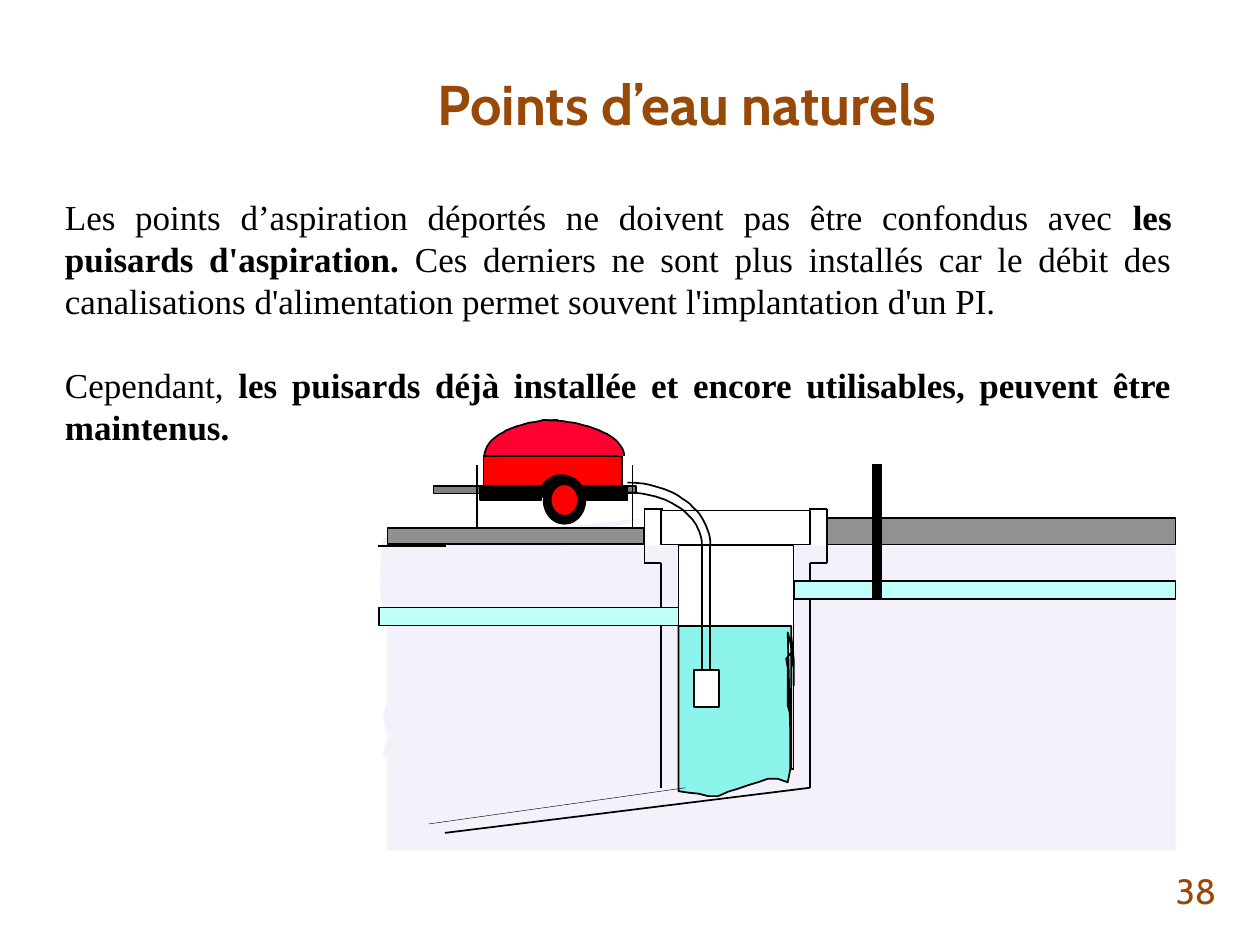
"""Build the slide on natural water points with its suction-pit diagram."""
from dataclasses import dataclass
from math import cos, radians, sin

from lxml.etree import SubElement
from pptx import Presentation
from pptx.dml.color import RGBColor
from pptx.enum.shapes import MSO_CONNECTOR, MSO_SHAPE as Preset
from pptx.enum.text import MSO_ANCHOR as Anchor, PP_ALIGN as Align
from pptx.oxml.ns import qn
from pptx.util import Cm, Pt


@dataclass(frozen=True)
class Theme:
    heading_font: str = "Cabin"
    body_font: str = "Times New Roman"
    title_size: int = 32
    text_size: int = 20
    brown: str = "984807"
    black: str = "000000"
    white: str = "FFFFFF"
    soil: str = "F5F1FA"
    concrete: str = "919191"
    steel: str = "808080"
    water: str = "8CF4EA"
    inflow: str = "C0FEF9"
    red: str = "FF0000"
    dome: str = "FF0030"


theme = Theme()
RECTANGLE, OVAL, PATH, LINE = Preset.RECTANGLE, Preset.OVAL, "path", "line"


def add_run(paragraph, text, font, size, color, bold=False):
    run = paragraph.add_run()
    run.text = text
    run.font.name = font
    run.font.size = Pt(size)
    run.font.bold = bold
    run.font.color.rgb = RGBColor.from_string(color)


def arc(center_x, center_y, radius_x, radius_y, start, end):
    angles = [radians(start + (end - start) * step / 24) for step in range(25)]
    return [(center_x + radius_x * cos(a), center_y - radius_y * sin(a)) for a in angles]


presentation = Presentation()
presentation.slide_width = Cm(25.4)
presentation.slide_height = Cm(19.05)
slide = presentation.slides.add_slide(presentation.slide_layouts[5])

number = slide.shapes.add_textbox(Cm(18.85), Cm(17.45), Cm(5.92), Cm(1.02))
number.text_frame.word_wrap = True
number.text_frame.vertical_anchor = Anchor.MIDDLE
paragraph = number.text_frame.paragraphs[0]
paragraph.alignment = Align.RIGHT
add_run(paragraph, "38", theme.heading_font, theme.text_size, theme.brown)

title = slide.shapes.title
title.left, title.top, title.width, title.height = Cm(3.1), Cm(0.76), Cm(21.51), Cm(2.62)
title.text_frame.vertical_anchor = Anchor.MIDDLE
paragraph = title.text_frame.paragraphs[0]
paragraph.alignment = Align.CENTER
add_run(paragraph, "Points d’eau naturels", theme.heading_font, theme.title_size, theme.brown, True)

body = slide.shapes.add_textbox(Cm(1.06), Cm(3.81), Cm(22.81), Cm(5.33))
body.text_frame.word_wrap = True
texts = [
    [("Les points d’aspiration déportés ne doivent pas être confondus avec ", False),
     ("les puisards d'aspiration.", True),
     (" Ces derniers ne sont plus installés car le débit des canalisations "
      "d'alimentation permet souvent l'implantation d'un PI.", False)],
    [("Cependant, ", False),
     ("les puisards déjà installée et encore utilisables, peuvent être maintenus.", True)],
]
for index, runs in enumerate(texts):
    paragraph = body.text_frame.add_paragraph() if index else body.text_frame.paragraphs[0]
    paragraph.alignment = Align.JUSTIFY
    if index:
        paragraph.space_before = Pt(24)
    for text, bold in runs:
        add_run(paragraph, text, theme.body_font, theme.text_size, theme.black, bold)

ground = 11
soil_left, soil_right, soil_bottom = 7.81, 23.7, 17.15
soil_width = soil_right - soil_left
pit_left, pit_right, pit_center = 13.68, 16, 14.83
wall_offset, collar_offset = 1.5, 1.84
wall_left, wall_right = pit_center - wall_offset, pit_center + wall_offset
collar_left, collar_right = pit_center - collar_offset, pit_center + collar_offset
collar_top, collar_bottom = 10.26, 11.35
water_top, wall_bottom = 12.62, 15.88
scene = []

layer_step, layer_height, layer_count = 0.4, 1.8, 7
for layer in range(layer_count):
    layer_top = ground + layer * layer_step
    scene.append((RECTANGLE, (soil_left, layer_top, soil_width, layer_height), theme.soil, 0))
deep_top = ground + layer_count * layer_step
scene.append((RECTANGLE, (soil_left, deep_top, soil_width, soil_bottom - deep_top), theme.soil, 0))

bank_top, bank_step = 10.85, 0.4
bulges = [0.08, 0.13, 0.16, 0.14, 0, 0, 0, 0, 0, 0.09, 0, 0.1]
bank_edge = [(soil_left - bulge, bank_top + row * bank_step) for row, bulge in enumerate(bulges)]
bank_slope = [(8.61, 15.34), (9.88, 13.82), (11.4, 12.27), (11.43, 10.92),
              (collar_left, 10.44), (11.68, 10.59)]
scene.append((PATH, bank_edge + bank_slope, theme.soil, 0))

scene += [
    (RECTANGLE, (soil_left, 10.64, collar_left - soil_left, 0.33), theme.concrete, 1),
    (RECTANGLE, (wall_left, 10.29, 2 * wall_offset, 0.69), theme.white, 1),
    (RECTANGLE, (pit_left, ground, pit_right - pit_left, 4.5), theme.white, 1),
]

bed_step = 0.2
bed_depths = [3.33, 3.36, 3.38, 3.43, 3.43, 3.34, 3.28, 3.21, 3.15, 3.08, 3.08, 3.15]
bed = [(pit_left + index * bed_step, water_top + depth) for index, depth in enumerate(bed_depths)]
crack = [(0.07, 2.9), (0.07, 1.78), (0.12, 1.6), (0.12, 0.84), (0.15, 0.66),
         (0.05, 0.54), (0.05, 0.18), (0, 0.66), (0, 1.2), (0, 0.84),
         (0.07, 0.31), (0.12, 0.13), (0.05, 2.85), (0.05, 0)]
water_side = [(pit_right - inset, water_top + depth) for inset, depth in crack]
scene.append((PATH, bed + water_side + [(pit_left, water_top)], theme.water, 1))

for side in (-1, 1):
    wall = pit_center + side * wall_offset
    collar = pit_center + side * collar_offset
    scene += [
        (LINE, (wall, collar_bottom, wall, wall_bottom), None, 1),
        (LINE, (wall, collar_bottom, collar, collar_bottom), None, 1),
        (LINE, (collar, collar_bottom, collar, collar_top), None, 1),
        (LINE, (collar, collar_top, wall - side * 0.03, collar_top), None, 1),
    ]
scene += [
    (LINE, (wall_right, wall_bottom, 8.97, 16.79), None, 1),
    (LINE, (8.99, ground, 7.62, ground), None, 1),
]

wheel_x, wheel_y = 11.38, 10.08
pump_center, pump_base, chassis_top = 11.18, 9.19, 9.8
scene += [
    (RECTANGLE, (9.75, pump_base, 2.79, chassis_top - pump_base), theme.red, 1),
    (RECTANGLE, (8.74, chassis_top, 4.09, 0.15), theme.steel, 1),
    (RECTANGLE, (11.66, chassis_top, 0.99, 0.28), theme.black, 1),
    (RECTANGLE, (9.68, chassis_top, 1.24, 0.28), theme.black, 1),
]
for radius in (0.43, 0.38, 0.34):
    scene.append((PATH, arc(11.31, 10.03, radius, radius, 180, 0), None, 2))
wheel_discs = [(0.42, 0.48, theme.black), (0.28, 0.32, theme.red)]
for radius_x, radius_y, color in wheel_discs:
    disc = (wheel_x - radius_x, wheel_y - radius_y, 2 * radius_x, 2 * radius_y)
    scene.append((OVAL, disc, color, 1))

dome_halves = [(11.25, 1.48, 180), (10.92, 1.66, 0)]
for center, radius, start in dome_halves:
    curve = arc(center, pump_base, radius, 0.72, start, 90)
    scene += [
        (PATH, curve + [(center, pump_base)], theme.dome, 0),
        (PATH, curve, None, 1),
    ]
scene.append((LINE, (9.73, pump_base, 12.45, pump_base), None, 1))
for side in (-1, 1):
    post = pump_center + side * 1.57
    scene.append((LINE, (post, 9.37, post, 10.62), None, 1))

hose_start, strainer_top = 12.65, 13.51
hose_walls = [(1.67, 1.27), (1.5, 1.07)]
for radius_x, radius_y in hose_walls:
    hose = hose_start + radius_x
    scene += [
        (PATH, arc(hose_start, ground, radius_x, radius_y, 90, 0), None, 1),
        (LINE, (hose, ground, hose, strainer_top), None, 1),
    ]

channel_left = 7.64
scene += [
    (RECTANGLE, (13.99, strainer_top, 0.51, 0.74), theme.white, 1),
    (RECTANGLE, (pit_right, 11.71, soil_right - pit_right, 0.36), theme.inflow, 1),
    (RECTANGLE, (collar_right, 10.44, soil_right - collar_right, 0.54), theme.concrete, 1),
    (RECTANGLE, (channel_left, 12.25, pit_left - channel_left, 0.36), theme.inflow, 1),
    (LINE, (13.82, wall_bottom, 8.64, 16.61), None, 0.25),
    (LINE, (17.68, 9.35, 17.68, 12.07), None, 6),
]

diagram = slide.shapes.add_group_shape().shapes
for kind, geometry, fill, line_width in scene:
    if kind == LINE:
        shape = diagram.add_connector(MSO_CONNECTOR.STRAIGHT, *map(Cm, geometry))
        SubElement(shape.element.spPr, qn("a:effectLst"))
    else:
        if kind == PATH:
            points = [(round(x * 100), round(y * 100)) for x, y in geometry]
            builder = diagram.build_freeform(*points[0], scale=Cm(0.01))
            builder.add_line_segments(points[1:], close=fill is not None)
            shape = builder.convert_to_shape()
        else:
            shape = diagram.add_shape(kind, *map(Cm, geometry))
        shape.shadow.inherit = False
        if fill:
            shape.fill.solid()
            shape.fill.fore_color.rgb = RGBColor.from_string(fill)
        else:
            shape.fill.background()
    if line_width:
        shape.line.color.rgb = RGBColor.from_string(theme.black)
        shape.line.width = Pt(line_width)
    else:
        shape.line.fill.background()

presentation.save("out.pptx")
